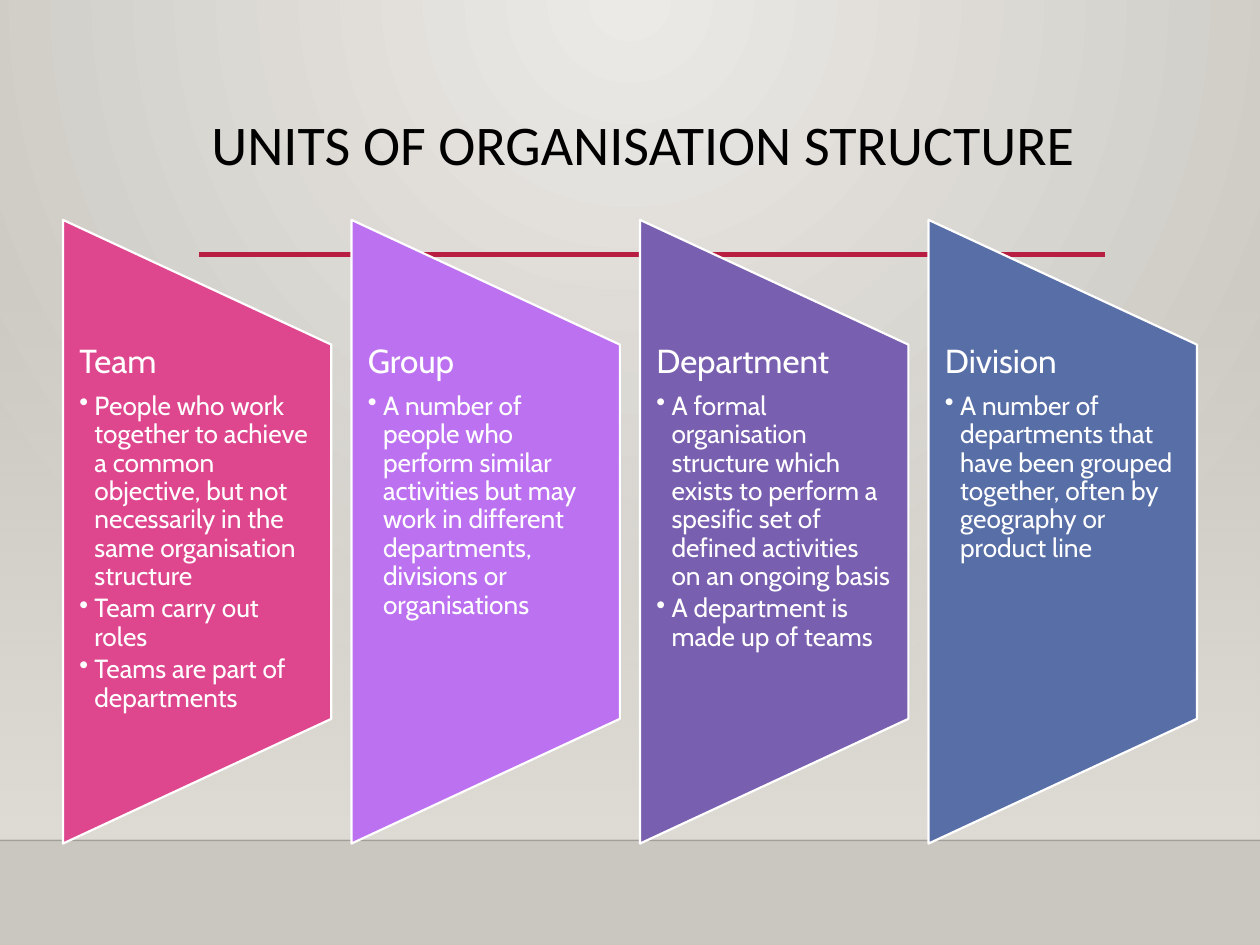
from lxml import etree
from pptx import Presentation
from pptx.dml.color import RGBColor
from pptx.enum.shapes import MSO_CONNECTOR, MSO_SHAPE
from pptx.enum.text import MSO_ANCHOR, PP_ALIGN
from pptx.oxml.ns import qn
from pptx.util import Inches, Pt

STRAIGHT = MSO_CONNECTOR.STRAIGHT
RECTANGLE = MSO_SHAPE.RECTANGLE
TRAPEZOID = MSO_SHAPE.FLOWCHART_MANUAL_OPERATION
TOP = MSO_ANCHOR.TOP
LEFT = PP_ALIGN.LEFT

WIDTH, HEIGHT = 10, 7.5
COLORS = {
    "light": "ECEAE7", "base": "CAC7C1", "wall": "DFDBD5", "edge": "000001",
    "rule": "B71E42", "black": "000000", "white": "FFFFFF", "pink": "DE478E",
    "violet": "BC72F0", "purple": "795FAF", "blue": "586EA6",
}
UNITS = [
    ("Team", "pink", [
        "People who work together to achieve a common objective, but not "
        "necessarily in the same organisation structure",
        "Team carry out roles",
        "Teams are part of departments"]),
    ("Group", "violet", [
        "A number of people who perform similar activities but may work in "
        "different departments, divisions or organisations"]),
    ("Department", "purple", [
        "A formal organisation structure which exists to perform a spesific "
        "set of defined activities on an ongoing basis",
        "A department is made up of teams"]),
    ("Division", "blue", [
        "A number of departments that have been grouped together, often by "
        "geography or product line"]),
]


class UnitsSlide:
    title_font, body_font = "Calibri", "Cabin"
    title_size, heading_size, bullet_size = 32, 19, 15
    line_spacing = 0.9
    margin, pitch, column_width = 0.5, 2.29, 2.13
    panel_middle, panel_height = 4.22, 4.95
    text_top, text_height = 2.74, 2.97
    indent = 0.12

    def __init__(self, presentation):
        self.slide = presentation.slides.add_slide(presentation.slide_layouts[6])

    def color(self, name):
        return RGBColor.from_string(COLORS[name])

    def set_alpha(self, color_element, percent):
        etree.SubElement(color_element, qn("a:alpha"), val=str(percent * 1000))

    def gradient(self, fill, first, last):
        fill.gradient()
        for stop, name in zip(fill.gradient_stops, (first, last)):
            stop.color.rgb = self.color(name)

    def background(self):
        self.gradient(self.slide.background.fill, "light", "base")
        linear = next(self.slide._element.iter(qn("a:lin")))
        radial = etree.Element(qn("a:path"), path="circle")
        etree.SubElement(radial, qn("a:fillToRect"),
                         l="43000", t="0", r="43000", b="100000")
        linear.getparent().replace(linear, radial)

    def wall(self, top, height):
        shape = self.slide.shapes.add_shape(
            RECTANGLE, 0, Inches(top), Inches(WIDTH), Inches(height))
        shape.shadow.inherit = False
        shape.line.fill.background()
        self.gradient(shape.fill, "wall", "wall")
        shape.fill.gradient_angle = 270
        self.set_alpha(next(shape._element.spPr.iter(qn("a:srgbClr"))), 0)

    def rule(self, left, right, y, color, weight, alpha=100):
        connector = self.slide.shapes.add_connector(
            STRAIGHT, Inches(left), Inches(y), Inches(right), Inches(y))
        connector.line.color.rgb = self.color(color)
        connector.line.width = Pt(weight)
        properties = connector._element.spPr
        if alpha < 100:
            self.set_alpha(next(properties.iter(qn("a:srgbClr"))), alpha)
        etree.SubElement(properties, qn("a:effectLst"))

    def text_frame(self, left, top, width, height, side=0.1, edge=0.05):
        box = self.slide.shapes.add_textbox(
            Inches(left), Inches(top), Inches(width), Inches(height))
        frame = box.text_frame
        frame.word_wrap = True
        frame.vertical_anchor = TOP
        frame.margin_left = frame.margin_right = Inches(side)
        frame.margin_top = frame.margin_bottom = Inches(edge)
        return frame

    def set_text(self, paragraph, text, font, size, color, space_share=0):
        paragraph.text = text
        paragraph.alignment = LEFT
        paragraph.line_spacing = self.line_spacing
        paragraph.space_after = Pt(size * space_share)
        paragraph.font.name = font
        paragraph.font.size = Pt(size)
        paragraph.font.color.rgb = self.color(color)

    def title(self, text, left, top, width, height):
        frame = self.text_frame(left, top, width, height)
        self.set_text(frame.paragraphs[0], text, self.title_font,
                      self.title_size, "black")

    def bullet(self, frame, text):
        paragraph = frame.add_paragraph()
        paragraph.level = 1
        properties = paragraph._p.get_or_add_pPr()
        properties.set("marL", str(Inches(self.indent)))
        properties.set("indent", str(-Inches(self.indent)))
        etree.SubElement(properties, qn("a:buChar"), char="•")
        self.set_text(paragraph, text, self.body_font, self.bullet_size,
                      "white", 0.15)

    def panel(self, left, color):
        shape = self.slide.shapes.add_shape(
            TRAPEZOID,
            Inches(left + (self.column_width - self.panel_height) / 2),
            Inches(self.panel_middle - self.column_width / 2),
            Inches(self.panel_height), Inches(self.column_width))
        shape.rotation = 270
        shape.shadow.inherit = False
        shape.fill.solid()
        shape.fill.fore_color.rgb = self.color(color)
        shape.line.color.rgb = self.color("white")
        shape.line.width = Pt(1.25)

    def unit(self, column, heading, color, points):
        left = self.margin + column * self.pitch
        self.panel(left, color)
        frame = self.text_frame(left, self.text_top, self.column_width,
                                self.text_height, side=0.13, edge=0)
        self.set_text(frame.paragraphs[0], heading, self.body_font,
                      self.heading_size, "white", 0.35)
        for point in points:
            self.bullet(frame, point)


def main():
    presentation = Presentation()
    presentation.slide_width = Inches(WIDTH)
    presentation.slide_height = Inches(HEIGHT)
    page = UnitsSlide(presentation)
    page.background()
    page.wall(2.2, 4.46)
    page.rule(0, WIDTH, 6.67, "edge", 1, alpha=20)
    page.rule(1.58, 8.77, 2.02, "rule", 2.5)
    page.title("UNITS OF ORGANISATION STRUCTURE", 1.58, 0.88, 7.19, 1.15)
    for column, (heading, color, points) in enumerate(UNITS):
        page.unit(column, heading, color, points)
    presentation.save("out.pptx")


if __name__ == "__main__":
    main()
